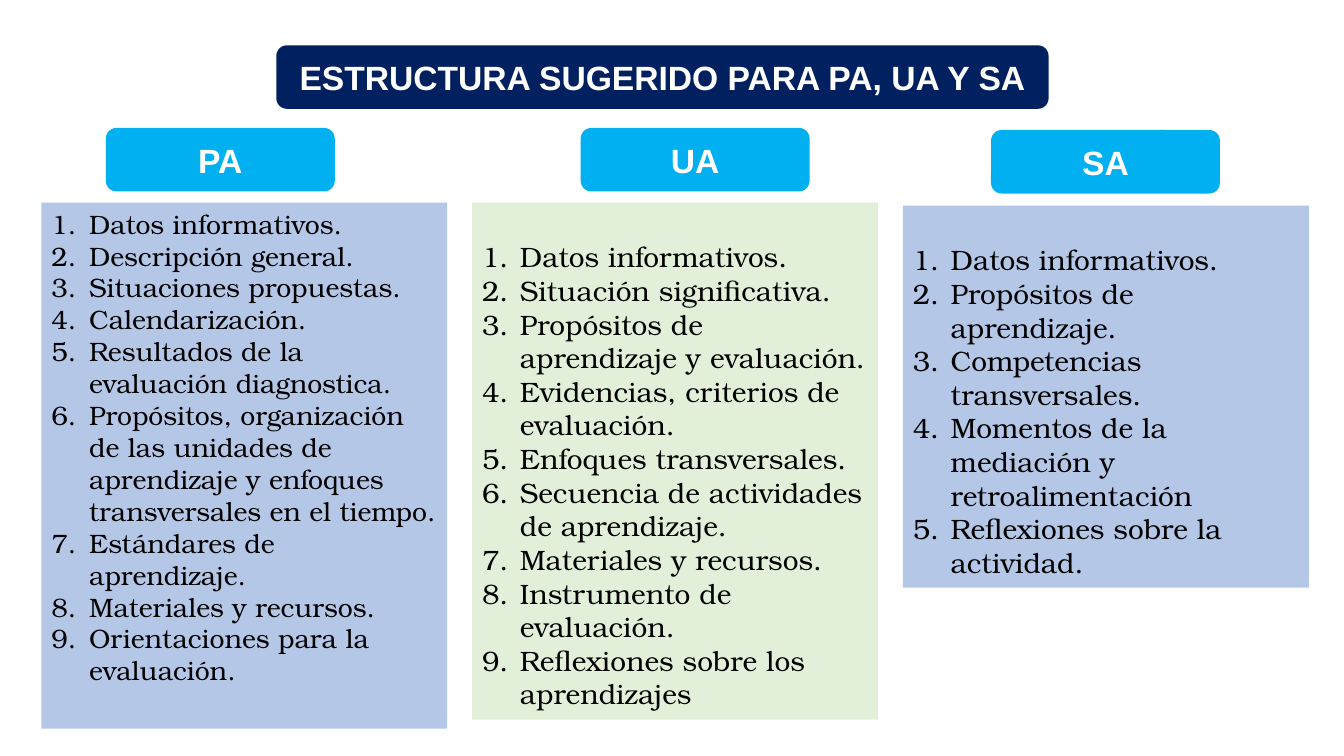
from dataclasses import dataclass

from lxml import etree
from pptx import Presentation
from pptx.dml.color import RGBColor
from pptx.enum.shapes import MSO_SHAPE
from pptx.enum.text import MSO_ANCHOR, PP_ALIGN
from pptx.oxml.ns import qn
from pptx.shapes.autoshape import Shape
from pptx.slide import Slide
from pptx.util import Inches, Pt

RECT = MSO_SHAPE.RECTANGLE
ROUNDED = MSO_SHAPE.ROUNDED_RECTANGLE
TOP, MIDDLE = MSO_ANCHOR.TOP, MSO_ANCHOR.MIDDLE
LEFT, CENTER = PP_ALIGN.LEFT, PP_ALIGN.CENTER

SLIDE_WIDTH, SLIDE_HEIGHT = Inches(13.33), Inches(7.5)
BLANK_LAYOUT = 6


@dataclass(frozen=True)
class Theme:
    navy: str = "002060"
    sky: str = "00B0F0"
    blue: str = "B4C7E7"
    green: str = "E2F0D9"
    white: str = "FFFFFF"
    black: str = "000000"
    heading_font: str = "Arial"
    list_font: str = "TeX Gyre Bonum"
    heading_size: int = 24
    list_size: int = 20
    dense_list_size: int = 19


THEME = Theme()


@dataclass(frozen=True)
class Area:
    """A rectangle in percent of the slide's width and height."""
    left: float
    top: float
    width: float
    height: float


@dataclass(frozen=True)
class Column:
    heading: str
    heading_left: float
    heading_top: float
    list_top: float
    list_height: float
    fill: str
    size: int
    top_inset: float
    items: tuple[str, ...]


TITLE = "ESTRUCTURA SUGERIDO PARA PA, UA Y SA"
TITLE_AREA = Area(20.56, 6, 57.46, 8.4)
HEADING_WIDTH, HEADING_HEIGHT = 17.03, 8.4
LIST_LEFT, LIST_PITCH, LIST_WIDTH = 3.08, 32.05, 30.2
NUMBER_INDENT = Inches(0.375)

COLUMNS = (
    Column("PA", 7.88, 16.93, 26.8, 69.6, THEME.blue, THEME.dense_list_size, 0.05, (
        "Datos informativos.",
        "Descripción general.",
        "Situaciones propuestas.",
        "Calendarización.",
        "Resultados de la evaluación diagnostica.",
        "Propósitos, organización de las unidades de aprendizaje y enfoques "
        "transversales en el tiempo.",
        "Estándares de aprendizaje.",
        "Materiales y recursos.",
        "Orientaciones para la evaluación.",
    )),
    Column("UA", 43.21, 16.93, 26.8, 68.4, THEME.green, THEME.list_size, 0.37, (
        "Datos informativos.",
        "Situación significativa.",
        "Propósitos de aprendizaje y evaluación.",
        "Evidencias, criterios de evaluación.",
        "Enfoques transversales.",
        "Secuencia de actividades de aprendizaje.",
        "Materiales y recursos.",
        "Instrumento de evaluación.",
        "Reflexiones sobre los aprendizajes",
    )),
    Column("SA", 73.74, 17.2, 27.2, 50.53, THEME.blue, THEME.list_size, 0.37, (
        "Datos informativos.",
        "Propósitos de aprendizaje.",
        "Competencias transversales.",
        "Momentos de la mediación y retroalimentación",
        "Reflexiones sobre la actividad.",
    )),
)


def add_panel(slide: Slide, kind: MSO_SHAPE, area: Area, fill: str) -> Shape:
    panel = slide.shapes.add_shape(
        kind,
        round(SLIDE_WIDTH * area.left / 100),
        round(SLIDE_HEIGHT * area.top / 100),
        round(SLIDE_WIDTH * area.width / 100),
        round(SLIDE_HEIGHT * area.height / 100),
    )
    panel.shadow.inherit = False
    panel.fill.solid()
    panel.fill.fore_color.rgb = RGBColor.from_string(fill)
    panel.line.fill.background()
    panel.text_frame.word_wrap = True
    return panel


def style_text(panel: Shape, font: str, size: int, color: str,
               bold: bool, alignment: PP_ALIGN) -> None:
    for paragraph in panel.text_frame.paragraphs:
        paragraph.alignment = alignment
        for run in paragraph.runs:
            run.font.name = font
            run.font.size = Pt(size)
            run.font.bold = bold
            run.font.color.rgb = RGBColor.from_string(color)


def number_paragraphs(panel: Shape) -> None:
    for paragraph in panel.text_frame.paragraphs:
        properties = paragraph._p.get_or_add_pPr()
        properties.set("marL", str(NUMBER_INDENT))
        properties.set("indent", str(-NUMBER_INDENT))
        etree.SubElement(properties, qn("a:buAutoNum"), type="arabicPeriod")


def add_heading(slide: Slide, text: str, area: Area, fill: str) -> None:
    heading = add_panel(slide, ROUNDED, area, fill)
    heading.text_frame.text = text
    heading.text_frame.vertical_anchor = MIDDLE
    style_text(heading, THEME.heading_font, THEME.heading_size, THEME.white, True, CENTER)


def add_column(slide: Slide, column: Column, index: int) -> None:
    list_area = Area(LIST_LEFT + index * LIST_PITCH, column.list_top,
                     LIST_WIDTH, column.list_height)
    numbered_list = add_panel(slide, RECT, list_area, column.fill)
    frame = numbered_list.text_frame
    frame.text = "\n".join(column.items)
    frame.vertical_anchor = TOP
    frame.margin_top = Inches(column.top_inset)
    style_text(numbered_list, THEME.list_font, column.size, THEME.black, False, LEFT)
    number_paragraphs(numbered_list)

    heading_area = Area(column.heading_left, column.heading_top,
                        HEADING_WIDTH, HEADING_HEIGHT)
    add_heading(slide, column.heading, heading_area, THEME.sky)


def main() -> None:
    presentation = Presentation()
    presentation.slide_width = SLIDE_WIDTH
    presentation.slide_height = SLIDE_HEIGHT
    slide = presentation.slides.add_slide(presentation.slide_layouts[BLANK_LAYOUT])
    add_heading(slide, TITLE, TITLE_AREA, THEME.navy)
    for index, column in enumerate(COLUMNS):
        add_column(slide, column, index)
    presentation.save("out.pptx")


if __name__ == "__main__":
    main()
